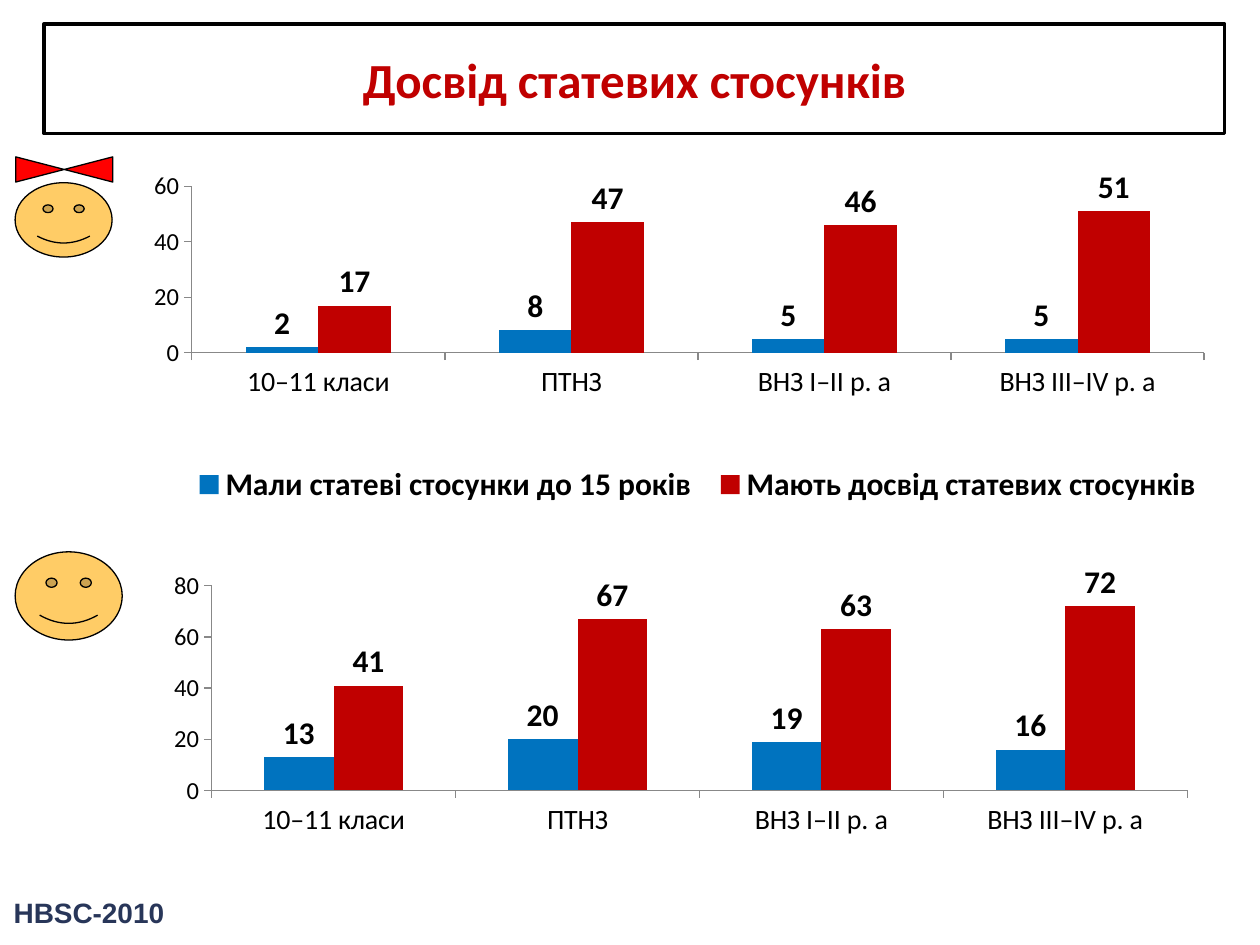
from lxml import etree
from pptx import Presentation
from pptx.chart.data import CategoryChartData
from pptx.dml.color import RGBColor
from pptx.enum import chart as charts, shapes, text
from pptx.oxml.ns import qn
from pptx.util import Inches, Pt

COLORS = {"early": "0073BF", "experience": "C00000", "black": "000000", "white": "FFFFFF",
          "face": "FFCC66", "bow": "FF0000", "source": "283659", "axis": "888888"}
TITLE = "Досвід статевих стосунків"
SOURCE = "HBSC-2010"
CATEGORIES = ["10–11 класи", "ПТНЗ", "ВНЗ І–ІІ p. a", "ВНЗ ІІІ–ІV p. a"]
SERIES = [("Мали статеві стосунки до 15 років", "early"),
          ("Мають досвід статевих стосунків", "experience")]
CHARTS = [
    {"box": (1.09, 1.25, 8.64, 2.87), "plot": (0.05, 0.08, 0.93, 0.46), "maximum": 60,
     "values": [(2, 8, 5, 5), (17, 47, 46, 51)], "legend": (0.04, 0.84, 0.95, 0.13)},
    {"box": (1.22, 4.47, 8.37, 2.2), "plot": (0.055, 0.08, 0.925, 0.74), "maximum": 80,
     "values": [(13, 20, 19, 16), (41, 67, 63, 72)], "legend": None},
]
FACES = [(0.12, 4.38, 0.85, 0.7), (0.12, 1.45, 0.77, 0.59)]
BOW = (0.41, 0.96, 0.2, 0.77)


def color(name):
    return RGBColor.from_string(COLORS[name])


def inches(box):
    return [Inches(length) for length in box]


def style_font(font, size, name="black", bold=False, family="Calibri"):
    font.size, font.bold, font.name = Pt(size), bold, family
    font.color.rgb = color(name)


def outline(shape, width):
    shape.line.color.rgb = color("black")
    shape.line.width = Pt(width)


def set_layout(parent, index, box, inner=False):
    for old in parent.findall(qn("c:layout")):
        parent.remove(old)
    layout = etree.Element(qn("c:layout"))
    manual = etree.SubElement(layout, qn("c:manualLayout"))
    settings = [("layoutTarget", "inner")] if inner else []
    settings += [("xMode", "edge"), ("yMode", "edge"), *zip("xywh", box)]
    for tag, value in settings:
        etree.SubElement(manual, qn("c:" + tag)).set("val", str(value))
    parent.insert(index, layout)


def add_title(page):
    title = page.shapes.title
    title.left, title.top, title.width, title.height = inches((0.35, 0.19, 9.37, 0.87))
    geometry = etree.SubElement(title._element.spPr, qn("a:prstGeom"), prst="roundRect")
    guides = etree.SubElement(geometry, qn("a:avLst"))
    etree.SubElement(guides, qn("a:gd"), name="adj", fmla="val 9100")
    outline(title, 2)
    frame = title.text_frame
    frame.text = TITLE
    frame.vertical_anchor = text.MSO_ANCHOR.MIDDLE
    frame.paragraphs[0].alignment = text.PP_ALIGN.CENTER
    style_font(frame.paragraphs[0].runs[0].font, 28, "experience", True)


def add_column_chart(page, item):
    data = CategoryChartData(number_format="#,##0")
    data.categories = CATEGORIES
    for (name, _), values in zip(SERIES, item["values"]):
        data.add_series(name, values)
    chart = page.shapes.add_chart(
        charts.XL_CHART_TYPE.COLUMN_CLUSTERED, *inches(item["box"]), data).chart
    chart.has_title = False
    style_font(chart.font, 14)

    plot = chart.plots[0]
    plot.gap_width, plot.overlap, plot.vary_by_categories = 150, 0, False
    for series, (_, fill) in zip(plot.series, SERIES):
        series.format.fill.solid()
        series.format.fill.fore_color.rgb = color(fill)
        labels = series.data_labels
        labels.show_value = True
        labels.number_format, labels.number_format_is_linked = "#,##0", False
        labels.position = charts.XL_LABEL_POSITION.OUTSIDE_END
        style_font(labels.font, 18, bold=True)

    for axis, size in ((chart.category_axis, 16), (chart.value_axis, 14)):
        axis.has_major_gridlines = False
        axis.major_tick_mark = charts.XL_TICK_MARK.OUTSIDE
        axis.format.line.color.rgb = color("axis")
        style_font(axis.tick_labels.font, size)
    values = chart.value_axis
    values.minimum_scale, values.maximum_scale, values.major_unit = 0, item["maximum"], 20
    values.tick_labels.number_format = "#,##0"
    values.tick_labels.number_format_is_linked = False
    set_layout(chart._chartSpace.chart.plotArea, 0, item["plot"], inner=True)

    chart.has_legend = item["legend"] is not None
    if chart.has_legend:
        legend = chart.legend
        legend.position = charts.XL_LEGEND_POSITION.BOTTOM
        legend.include_in_layout = False
        style_font(legend.font, 18, bold=True)
        set_layout(legend._element, 1, item["legend"])


def add_figure(page, kind, box, fill):
    shape = page.shapes.add_shape(kind, *inches(box))
    shape.shadow.inherit = False
    shape.fill.solid()
    shape.fill.fore_color.rgb = color(fill)
    outline(shape, 0.75)
    return shape


def add_source(page):
    frame = page.shapes.add_textbox(*inches((0.01, 7.06, 2.28, 0.37))).text_frame
    frame.word_wrap = True
    frame.auto_size = text.MSO_AUTO_SIZE.SHAPE_TO_FIT_TEXT
    frame.text = SOURCE
    style_font(frame.paragraphs[0].runs[0].font, 16, "source", True, "Arial")


def main():
    deck = Presentation()
    deck.slide_width, deck.slide_height = Inches(10), Inches(7.5)
    page = deck.slides.add_slide(deck.slide_layouts[5])
    page.background.fill.solid()
    page.background.fill.fore_color.rgb = color("white")
    add_title(page)
    for item in CHARTS:
        add_column_chart(page, item)
    for box in FACES:
        face = add_figure(page, shapes.MSO_SHAPE.SMILEY_FACE, box, "face")
        face.adjustments[0] = 0.047
    bow = add_figure(page, shapes.MSO_SHAPE.FLOWCHART_COLLATE, BOW, "bow")
    bow.rotation = 270
    add_source(page)
    deck.save("out.pptx")


if __name__ == "__main__":
    main()
